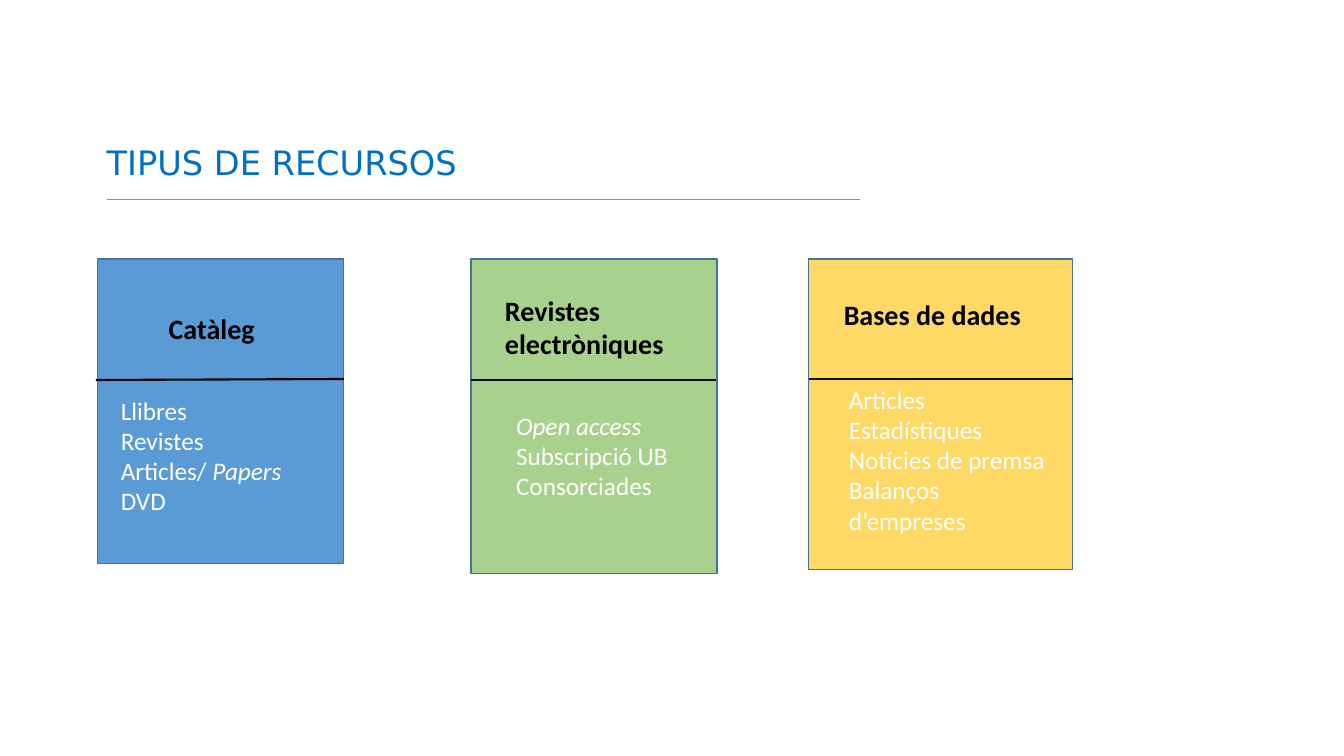
from lxml import etree
from pptx import Presentation
from pptx.dml.color import RGBColor
from pptx.enum import shapes, text
from pptx.oxml.ns import qn
from pptx.util import Inches, Pt

BLUE = RGBColor(0x5B, 0x9B, 0xD5)
GREEN = RGBColor(0xA9, 0xD1, 0x8E)
YELLOW = RGBColor(0xFF, 0xD9, 0x66)
BORDER = RGBColor(0x43, 0x73, 0x9E)
TITLE_BLUE = RGBColor(0x00, 0x70, 0xC0)
BLACK = RGBColor(0, 0, 0)
NEAR_BLACK = RGBColor(0x0D, 0x0D, 0x0D)
WHITE = RGBColor(0xFF, 0xFF, 0xFF)

TITLE = "TIPUS DE RECURSOS"
ITALIC = {"Open access", "Papers"}
CARD_TOP = 2.57
LEFT, CENTER = text.PP_ALIGN.LEFT, text.PP_ALIGN.CENTER

RESOURCES = [
    {"heading": "Catàleg", "heading_box": (0.97, 3.04, 2.26, 0.44), "align": CENTER,
     "items": [["Llibres"], ["Revistes"], ["Articles/ ", "Papers"], ["DVD"]],
     "items_box": (1.1, 3.87, 2.17, 1.62),
     "left": 0.97, "width": 2.44, "height": 3.02, "fill": BLUE,
     "divider": (0.95, 3.77, 3.41, 3.76), "divider_color": BLACK},
    {"heading": "Revistes electròniques", "heading_box": (4.91, 2.86, 1.88, 0.77), "align": LEFT,
     "items": [["Open access"], ["Subscripció UB"], ["Consorciades"]],
     "items_box": (5.02, 4.02, 1.88, 1.58),
     "left": 4.67, "width": 2.44, "height": 3.12, "fill": GREEN,
     "divider": (4.67, 3.77, 7.1, 3.77), "divider_color": NEAR_BLACK},
    {"heading": "Bases de dades", "heading_box": (8.27, 2.9, 2.12, 0.44), "align": LEFT,
     "items": [["Articles"], ["Estadístiques"], ["Notícies de premsa"], ["Balanços d’empreses"]],
     "items_box": (8.32, 3.76, 2.19, 2.22),
     "left": 8.02, "width": 2.62, "height": 3.08, "fill": YELLOW,
     "divider": (8.02, 3.76, 10.64, 3.76), "divider_color": NEAR_BLACK},
]


def add_text(slide, box, lines, size, color, font="Calibri", bold=False, align=LEFT):
    frame = slide.shapes.add_textbox(*map(Inches, box)).text_frame
    frame.word_wrap = True
    for index, pieces in enumerate(lines):
        paragraph = frame.paragraphs[0] if index == 0 else frame.add_paragraph()
        paragraph.alignment = align
        paragraph.font.name = font
        paragraph.font.size = Pt(size)
        paragraph.font.bold = bold
        paragraph.font.color.rgb = color
        for piece in pieces:
            run = paragraph.add_run()
            run.text = piece
            if piece in ITALIC:
                run.font.italic = True


def add_line(slide, ends, color, width):
    line = slide.shapes.add_connector(shapes.MSO_CONNECTOR.STRAIGHT, *map(Inches, ends))
    line.line.color.rgb = color
    line.line.width = Pt(width)
    etree.SubElement(line._element.spPr, qn("a:effectLst"))


def add_resource(slide, resource):
    card = slide.shapes.add_shape(
        shapes.MSO_SHAPE.RECTANGLE, Inches(resource["left"]), Inches(CARD_TOP),
        Inches(resource["width"]), Inches(resource["height"]))
    card.shadow.inherit = False
    card.fill.solid()
    card.fill.fore_color.rgb = resource["fill"]
    card.line.color.rgb = BORDER
    card.line.width = Pt(1)
    add_line(slide, resource["divider"], resource["divider_color"], 1.5)
    add_text(slide, resource["heading_box"], [[resource["heading"]]], 20, BLACK,
             bold=True, align=resource["align"])
    add_text(slide, resource["items_box"], resource["items"], 18, WHITE)


def main():
    deck = Presentation()
    deck.slide_width, deck.slide_height = Inches(13.33), Inches(7.5)
    slide = deck.slides.add_slide(deck.slide_layouts[6])
    add_text(slide, (0.96, 1.36, 8.46, 0.5), [[TITLE]], 24, TITLE_BLUE, font="DejaVu Sans")
    add_line(slide, (1.06, 1.98, 8.53, 1.98), BLUE, 0.5)
    for resource in RESOURCES:
        add_resource(slide, resource)
    deck.save("out.pptx")


if __name__ == "__main__":
    main()
